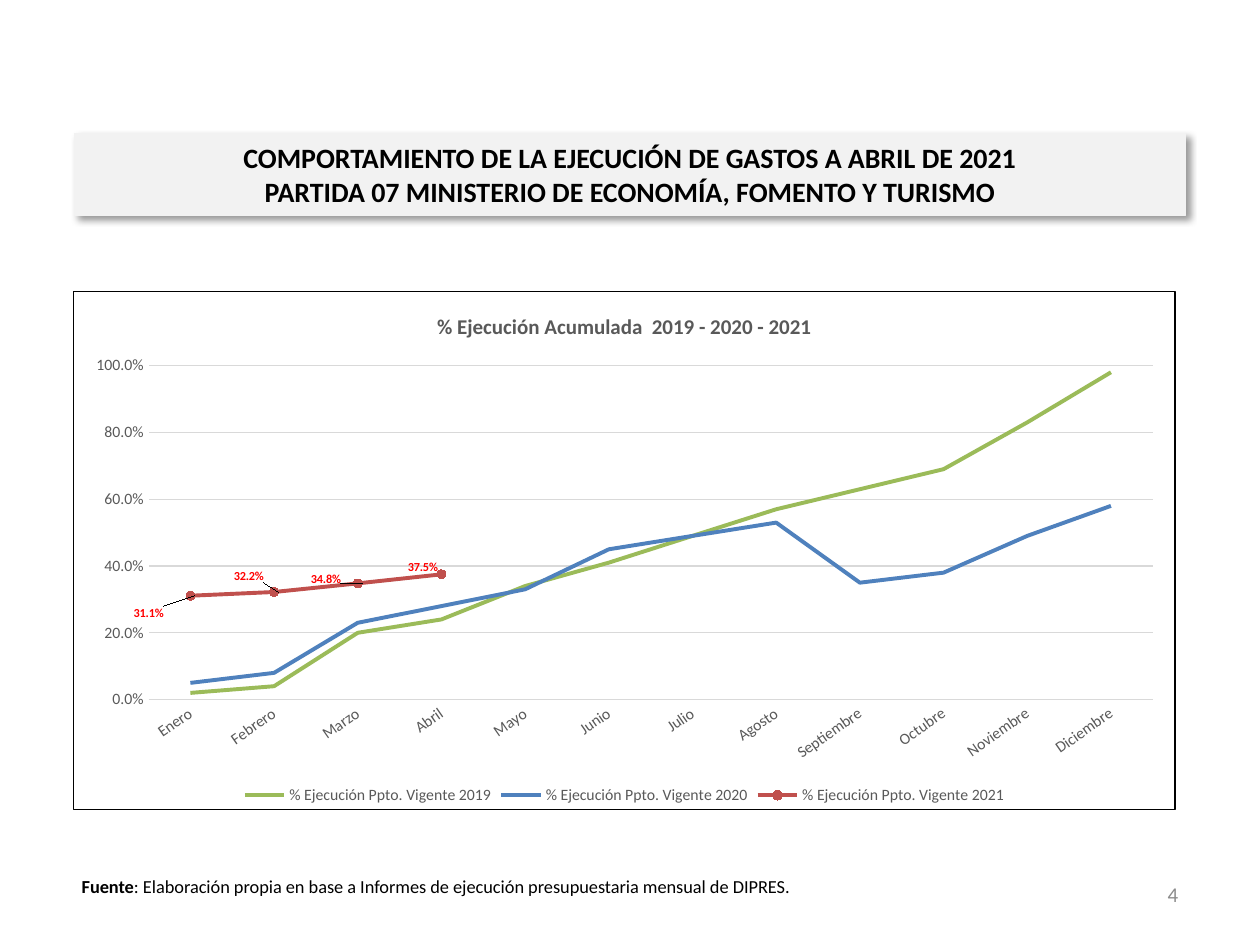
from copy import deepcopy
from dataclasses import dataclass

from lxml import etree
from pptx import Presentation
from pptx import util as u
from pptx.chart import data as chart_data
from pptx.dml.color import RGBColor
from pptx.enum import chart as charts
from pptx.enum import text
from pptx.oxml import ns, parse_xml

FONT = "Calibri"
GREY = "595959"
MONTHS = ["Enero", "Febrero", "Marzo", "Abril", "Mayo", "Junio", "Julio", "Agosto",
          "Septiembre", "Octubre", "Noviembre", "Diciembre"]


@dataclass
class YearLine:
    year: int
    color: str
    percents: list[float]
    label_shifts: tuple[tuple[float, float], ...] = ()


YEARS = [
    YearLine(2019, "9BBB59", [2, 4, 20, 24, 34, 41, 49, 57, 63, 69, 83, 98]),
    YearLine(2020, "4F81BD", [5, 8, 23, 28, 33, 45, 49, 53, 35, 38, 49, 58]),
    YearLine(2021, "C0504D", [31.1, 32.2, 34.8, 37.5],
             ((-6, 3.4), (-4.5, -3.2), (-5.1, -0.8), (-3.9, -1.4))),
]


def rgb(color: str) -> RGBColor:
    return RGBColor.from_string(color)


def format_font(font, size: float, color: str, bold: bool = False) -> None:
    font.name = FONT
    font.size = u.Pt(size)
    font.bold = bold
    font.color.rgb = rgb(color)


def add_text(para, words: str, *, size: float, color: str = "000000",
             bold: bool = False, align=None) -> None:
    if align is not None:
        para.alignment = align
    for number, line in enumerate(words.split("\n")):
        if number:
            para.add_line_break()
        span = para.add_run()
        span.text = line
        format_font(span.font, size, color, bold)
    for line_break in para._p.findall(ns.qn("a:br")):
        line_break.insert(0, deepcopy(span._r.rPr))


def place(box, left: float, top: float, width: float, height: float) -> None:
    box.left, box.top = u.Inches(left), u.Inches(top)
    box.width, box.height = u.Inches(width), u.Inches(height)


def add_box(page, left: float, top: float, width: float, height: float):
    box = page.shapes.add_textbox(*map(u.Inches, (left, top, width, height)))
    box.text_frame.word_wrap = True
    return box


def add_shadow(shape) -> None:
    shape._element.spPr.append(parse_xml(
        f'<a:effectLst {ns.nsdecls("a")}><a:outerShdw blurRad="{u.Pt(4)}" dist="{u.Pt(3)}" '
        'dir="2700000" algn="tl" rotWithShape="0"><a:srgbClr val="000000">'
        '<a:alpha val="40000"/></a:srgbClr></a:outerShdw></a:effectLst>'))


def layout_in_percent(inner: bool = False, **percents: float) -> etree._Element:
    layout = parse_xml(f'<c:layout {ns.nsdecls("c")}><c:manualLayout/></c:layout>')
    settings = {"layoutTarget": "inner", "xMode": "edge", "yMode": "edge"} if inner else {}
    shares = {tag: round(value / 100, 4) for tag, value in percents.items()}
    for tag, value in {**settings, **shares}.items():
        etree.SubElement(layout[0], ns.qn(f"c:{tag}")).set("val", str(value))
    return layout


def hide_leader_lines(labels) -> None:
    labels._element.append(parse_xml(
        f'<c:extLst {ns.nsdecls("c")}><c:ext uri="{{CE6537A1-D6FC-4f65-9D91-7224C49458BB}}" '
        'xmlns:c15="http://schemas.microsoft.com/office/drawing/2012/chart">'
        '<c15:showLeaderLines val="0"/></c:ext></c:extLst>'))


def add_title(page) -> None:
    title = page.shapes.title
    place(title, 0.59, 1.06, 8.82, 0.65)
    title.fill.solid()
    title.fill.fore_color.rgb = rgb("F2F2F2")
    title.line.color.rgb = rgb("F2F2F2")
    title.line.width = u.Pt(0.75)
    add_shadow(title)
    frame = title.text_frame
    frame.word_wrap = True
    frame.auto_size = text.MSO_AUTO_SIZE.NONE
    frame.vertical_anchor = text.MSO_ANCHOR.MIDDLE
    add_text(frame.paragraphs[0],
             "COMPORTAMIENTO DE LA EJECUCIÓN DE GASTOS A ABRIL DE 2021\n"
             "PARTIDA 07 MINISTERIO DE ECONOMÍA, FOMENTO Y TURISMO",
             size=16, bold=True, align=text.PP_ALIGN.CENTER)


def style_series(series, year: YearLine) -> None:
    series.smooth = False
    series.format.line.color.rgb = rgb(year.color)
    series.format.line.width = u.Pt(2.25)
    if not year.label_shifts:
        series.marker.style = charts.XL_MARKER_STYLE.NONE
        return
    series.marker.style = charts.XL_MARKER_STYLE.CIRCLE
    series.marker.size = 5
    series.marker.format.fill.solid()
    series.marker.format.fill.fore_color.rgb = rgb(year.color)
    series.marker.format.line.color.rgb = rgb(year.color)
    labels = series.data_labels
    labels.show_value = True
    labels.number_format = "0.0%"
    labels.number_format_is_linked = False
    labels.position = charts.XL_LABEL_POSITION.RIGHT
    format_font(labels.font, 7, "FF0000", True)
    for index, (x, y) in enumerate(year.label_shifts):
        label = series.points[index].data_label
        format_font(label.font, 7, "FF0000", True)
        label.position = charts.XL_LABEL_POSITION.RIGHT
        element = labels._element.findall(ns.qn("c:dLbl"))[index]
        element.insert(1, layout_in_percent(x=x, y=y))
    hide_leader_lines(labels)


def style_axes(chart) -> None:
    months, percents = chart.category_axis, chart.value_axis
    for axis in (months, percents):
        axis.major_tick_mark = charts.XL_TICK_MARK.NONE
        axis.minor_tick_mark = charts.XL_TICK_MARK.NONE
        format_font(axis.tick_labels.font, 9, GREY)
    months.format.line.color.rgb = rgb("D9D9D9")
    months.format.line.width = u.Pt(1)
    months._element.find(ns.qn("c:txPr")).find(ns.qn("a:bodyPr")).set("rot", "-2100000")
    percents.minimum_scale, percents.maximum_scale, percents.major_unit = 0, 1, 0.2
    percents.tick_labels.number_format = "0.0%"
    percents.tick_labels.number_format_is_linked = False
    percents.format.line.fill.background()
    percents.major_gridlines.format.line.color.rgb = rgb("D9D9D9")
    percents.major_gridlines.format.line.width = u.Pt(0.75)


def add_chart(page) -> None:
    data = chart_data.CategoryChartData(number_format="0.0%")
    data.categories = MONTHS
    for year in YEARS:
        gaps = [None] * (len(MONTHS) - len(year.percents))
        data.add_series(f"% Ejecución Ppto. Vigente {year.year}",
                        [round(value / 100, 3) for value in year.percents] + gaps)
    chart = page.shapes.add_chart(
        charts.XL_CHART_TYPE.LINE_MARKERS,
        *map(u.Inches, (0.58, 2.31, 8.75, 4.12)), data).chart
    format_font(chart.font, 10, "000000")
    chart.has_title = True
    add_text(chart.chart_title.text_frame.paragraphs[0],
             "% Ejecución Acumulada  2019 - 2020 - 2021", size=12, color=GREY, bold=True)
    chart.chart_title.include_in_layout = False
    chart.has_legend = True
    chart.legend.position = charts.XL_LEGEND_POSITION.BOTTOM
    chart.legend.include_in_layout = False
    format_font(chart.legend.font, 9, GREY)
    chart.plots[0].vary_by_categories = False
    for series, year in zip(chart.plots[0].series, YEARS):
        style_series(series, year)
    style_axes(chart)

    space = chart._chartSpace
    area = space.chart.plotArea
    for old in area.findall(ns.qn("c:layout")):
        area.remove(old)
    area.insert(0, layout_in_percent(inner=True, x=6.8, y=14.3, w=91.2, h=64.5))
    space.chart.addnext(parse_xml(
        f'<c:spPr {ns.nsdecls("c", "a")}><a:solidFill><a:srgbClr val="FFFFFF"/></a:solidFill>'
        f'<a:ln w="{u.Pt(0.75)}"><a:solidFill><a:srgbClr val="000000"/></a:solidFill></a:ln>'
        '</c:spPr>'))


def main() -> None:
    deck = Presentation()
    deck.slide_width, deck.slide_height = u.Inches(10), u.Inches(7.5)
    page = deck.slides.add_slide(deck.slide_layouts[5])
    add_title(page)
    number = add_box(page, 7.12, 6.9, 2.33, 0.4)
    number.text_frame.vertical_anchor = text.MSO_ANCHOR.MIDDLE
    add_text(number.text_frame.paragraphs[0], "4", size=12, color="8C8C8C",
             align=text.PP_ALIGN.RIGHT)
    source = add_box(page, 0.55, 6.9, 9, 0.4).text_frame.paragraphs[0]
    add_text(source, "Fuente", size=10.5, bold=True)
    add_text(source, ": Elaboración propia en base a Informes de ejecución presupuestaria "
                     "mensual de DIPRES.", size=10.5)
    add_chart(page)
    deck.save("out.pptx")


if __name__ == "__main__":
    main()
